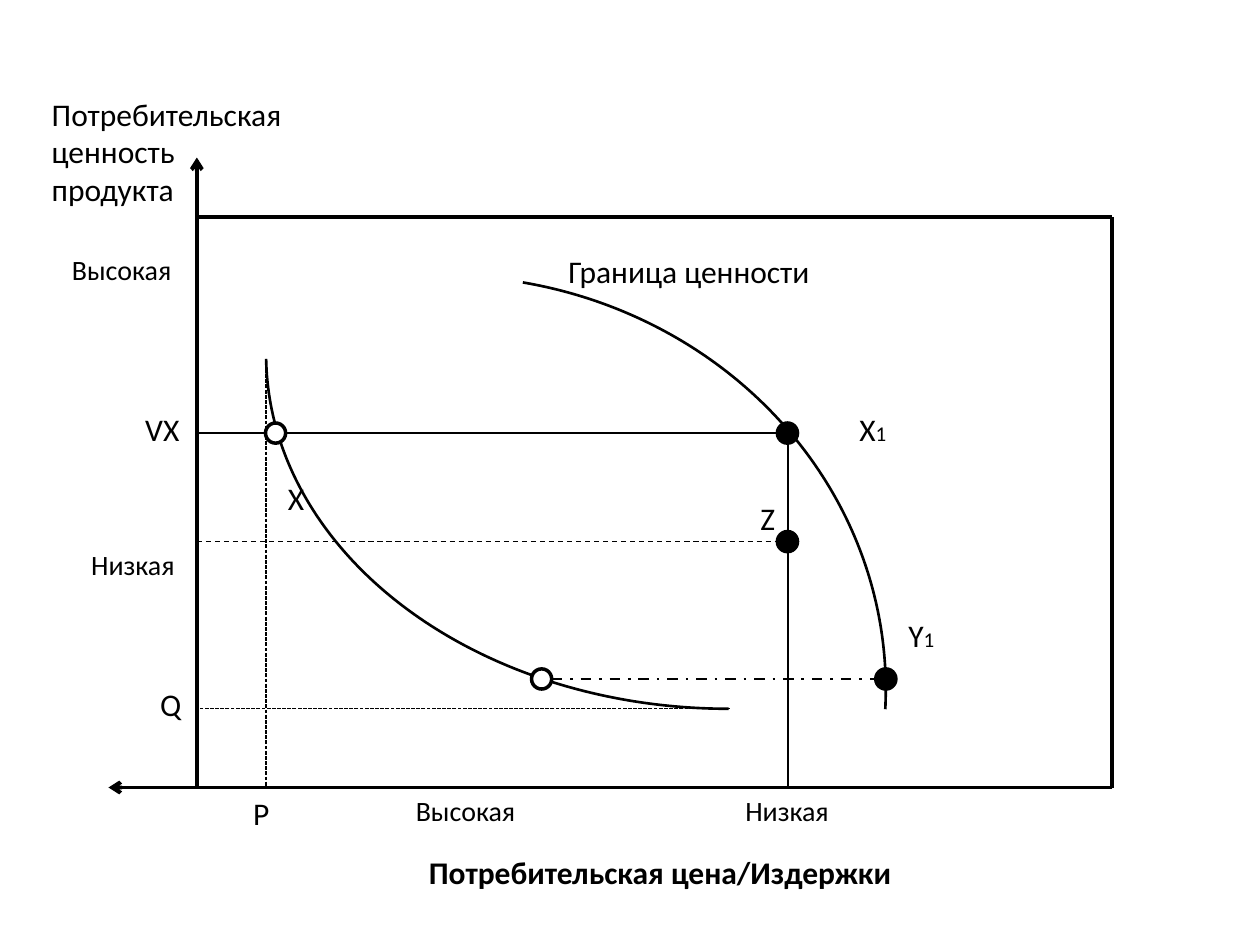
from dataclasses import dataclass

from lxml import etree
from pptx import Presentation
from pptx.dml.color import RGBColor
from pptx.enum.dml import MSO_LINE
from pptx.enum.shapes import MSO_CONNECTOR, MSO_SHAPE
from pptx.enum.text import MSO_AUTO_SIZE, PP_ALIGN
from pptx.oxml.ns import qn
from pptx.util import Pt

LEFT, CENTER = PP_ALIGN.LEFT, PP_ALIGN.CENTER
STRAIGHT, ELBOW = MSO_CONNECTOR.STRAIGHT, MSO_CONNECTOR.ELBOW
DASH, SHORT_DASH, DASH_DOT = MSO_LINE.DASH, MSO_LINE.SQUARE_DOT, MSO_LINE.DASH_DOT
BLACK, WHITE = "000000", "FFFFFF"
FONT = "Calibri"

# Chart frame and levels, in points
AXIS_X, FRAME_RIGHT = 112.5, 635.6
FRAME_TOP, AXIS_Y = 124, 450
PRICE_P, PRICE_X, PRICE_Y = 152, 157.5, 309.5
PRICE_X1, PRICE_Y1 = 450, 506.2
VALUE_X, VALUE_Z, VALUE_Y, VALUE_Q = 247.5, 309.5, 388, 405
MARKER_SIZE = 11.5
MARKER_RADIUS = MARKER_SIZE / 2


@dataclass
class Line:
    start: tuple[float, float]
    end: tuple[float, float]
    width: float = 0.75
    dash: MSO_LINE | None = None
    arrow: bool = False
    bend: int | None = None


@dataclass
class Curve:
    left: float
    top: float
    width: float
    height: float
    angles: tuple[float, float]
    rotation: float = 0


@dataclass
class Marker:
    x: float
    y: float
    fill: str


@dataclass
class Label:
    text: str
    left: float
    top: float
    width: float
    size: float = 18
    align: PP_ALIGN = LEFT
    bold: bool = False
    index: str = ""
    height: float = 28.8


LINES = [
    # Axes and frame
    Line((FRAME_RIGHT, AXIS_Y), (62, AXIS_Y), 2.25, arrow=True),
    Line((AXIS_X, AXIS_Y), (AXIS_X, 90), 2.25, arrow=True),
    Line((AXIS_X, FRAME_TOP), (FRAME_RIGHT, FRAME_TOP), 2.25),
    Line((FRAME_RIGHT, AXIS_Y), (FRAME_RIGHT, FRAME_TOP), 2.25),
    # Guides
    Line((AXIS_X, VALUE_X), (PRICE_X1, AXIS_Y), bend=100100),
    Line((AXIS_X, VALUE_Z), (PRICE_X1, VALUE_Z), dash=DASH),
    Line((417, VALUE_Q), (AXIS_X, VALUE_Q), dash=SHORT_DASH),
    Line((PRICE_P, 205), (PRICE_P, AXIS_Y), dash=SHORT_DASH),
    Line((PRICE_Y + MARKER_RADIUS, VALUE_Y), (PRICE_Y1, VALUE_Y), 1.5, DASH_DOT),
]

CURVES = [
    Curve(PRICE_P, 0, 528.5, VALUE_Q, (270, 359.45), rotation=180),
    Curve(0, 157.5, PRICE_Y1, 472.5, (281.13, 2.61)),
]

MARKERS = [
    Marker(PRICE_X, VALUE_X, WHITE),
    Marker(PRICE_Y, VALUE_Y, WHITE),
    Marker(PRICE_X1, VALUE_X, BLACK),
    Marker(PRICE_Y1, VALUE_Y, BLACK),
    Marker(PRICE_X1, VALUE_Z, BLACK),
]

LABELS = [
    # Axis titles and scales
    Label("Потребительская ценность продукта", 22.5, 50.5, 157.5, height=72.7),
    Label("Высокая", 34, 140.5, 84, 16, height=26.6),
    Label("Низкая", 45, 309.5, 78.5, 16, height=26.6),
    Label("Высокая", 230.5, AXIS_Y, 84, 16, height=26.6),
    Label("Низкая", 410.5, AXIS_Y, 78.5, 16, CENTER, height=26.6),
    Label("Потребительская цена/Издержки", 219.5, 484, 315.5, align=CENTER, bold=True),
    # Levels on the axes
    Label("VX", 67.5, 230.5, 50.5, align=CENTER),
    Label("Q", 84.5, 388, 28),
    Label("P", 129.5, AXIS_Y, 39.5, align=CENTER),
    # Points and the upper curve
    Label("Z", 427.5, 281.5, 16.5),
    Label("X", 157.5, 270, 16.5, align=CENTER),
    Label("X", 484, 230.5, 34, index="1"),
    Label("Y", 512, 348.5, 44.5, index="1"),
    Label("Граница ценности", 309.5, 140.5, 168.5, align=CENTER),
]


def color(value: str) -> RGBColor:
    return RGBColor.from_string(value)


def draw_line(slide, line: Line) -> None:
    kind = STRAIGHT if line.bend is None else ELBOW
    connector = slide.shapes.add_connector(
        kind, *(Pt(value) for value in (*line.start, *line.end)))
    connector.line.color.rgb = color(BLACK)
    connector.line.width = Pt(line.width)
    if line.dash is not None:
        connector.line.dash_style = line.dash
    properties = connector._element.spPr
    if line.arrow:
        etree.SubElement(properties.find(qn("a:ln")), qn("a:tailEnd"), type="arrow")
    if line.bend is not None:
        geometry = properties.find(qn("a:prstGeom"))
        guides = geometry.find(qn("a:avLst"))
        if guides is None:
            guides = etree.SubElement(geometry, qn("a:avLst"))
        etree.SubElement(guides, qn("a:gd"), name="adj1", fmla=f"val {line.bend}")
    etree.SubElement(properties, qn("a:effectLst"))


def draw_shape(slide, kind: MSO_SHAPE, box: tuple, line_width: float):
    shape = slide.shapes.add_shape(kind, *(Pt(value) for value in box))
    shape.shadow.inherit = False
    shape.line.color.rgb = color(BLACK)
    shape.line.width = Pt(line_width)
    return shape


def draw_curve(slide, curve: Curve) -> None:
    box = (curve.left, curve.top, curve.width, curve.height)
    shape = draw_shape(slide, MSO_SHAPE.ARC, box, 1.5)
    shape.fill.background()
    shape.rotation = curve.rotation
    for position, degrees in enumerate(curve.angles):
        shape.adjustments[position] = degrees * 0.6


def draw_marker(slide, marker: Marker) -> None:
    box = (marker.x - MARKER_RADIUS, marker.y - MARKER_RADIUS, MARKER_SIZE, MARKER_SIZE)
    shape = draw_shape(slide, MSO_SHAPE.OVAL, box, 2)
    shape.fill.solid()
    shape.fill.fore_color.rgb = color(marker.fill)


def draw_label(slide, label: Label) -> None:
    box = (label.left, label.top, label.width, label.height)
    frame = slide.shapes.add_textbox(*(Pt(value) for value in box)).text_frame
    frame.word_wrap = True
    frame.auto_size = MSO_AUTO_SIZE.SHAPE_TO_FIT_TEXT
    paragraph = frame.paragraphs[0]
    paragraph.alignment = label.align
    paragraph.font.name = FONT
    paragraph.font.size = Pt(label.size)
    paragraph.font.bold = label.bold
    paragraph.font.color.rgb = color(BLACK)
    paragraph.add_run().text = label.text
    if label.index:
        index = paragraph.add_run()
        index.text = label.index
        index.font.size = Pt(12)


def main() -> None:
    presentation = Presentation()
    presentation.slide_width, presentation.slide_height = Pt(720), Pt(540)
    slide = presentation.slides.add_slide(presentation.slide_layouts[6])
    for draw, items in ((draw_line, LINES), (draw_curve, CURVES),
                        (draw_marker, MARKERS), (draw_label, LABELS)):
        for item in items:
            draw(slide, item)
    presentation.save("out.pptx")


if __name__ == "__main__":
    main()
